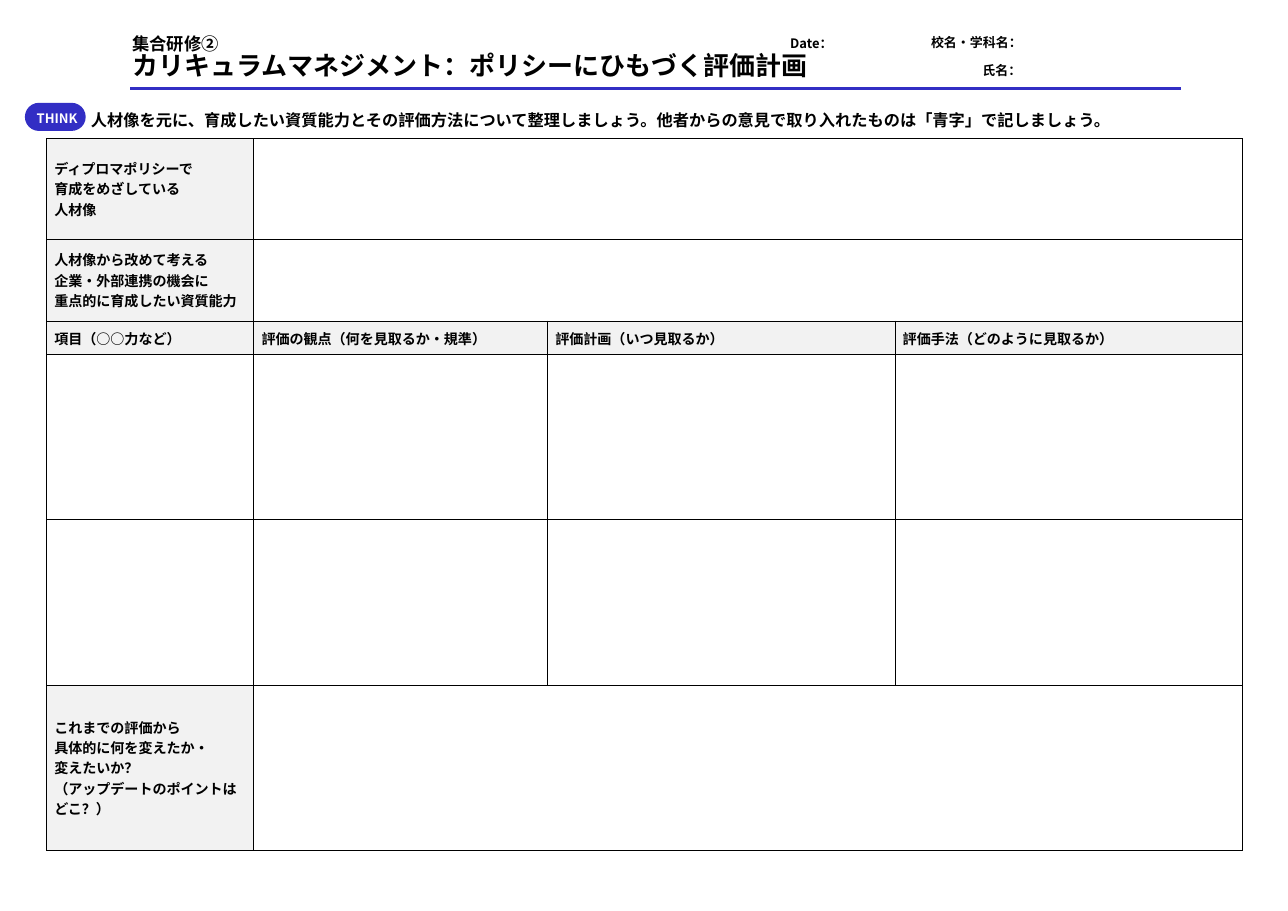
from pptx import Presentation
from pptx.dml.color import RGBColor as RGB
from pptx.enum.shapes import MSO_CONNECTOR as CONN, MSO_SHAPE as SHAPE
from pptx.enum.text import MSO_ANCHOR as ANCHOR, MSO_AUTO_SIZE as FIT, PP_ALIGN as ALIGN
from pptx.oxml import parse_xml
from pptx.oxml.ns import nsdecls
from pptx.util import Pt

COLORS = {"ink": "000000", "accent": "322EC4", "label": "F2F2F2", "white": "FFFFFF"}
FONT = "Noto Sans CJK JP"


class Sheet:
    def __init__(self, prs):
        self.s = prs.slides.add_slide(prs.slide_layouts[5])

    def color(self, name):
        return RGB.from_string(COLORS[name])

    def add_lines(self, tf, lines, sizes, color="ink", spacing=None):
        for i, (line, size) in enumerate(zip(lines, sizes)):
            p = tf.add_paragraph() if i else tf.paragraphs[0]
            p.alignment = ALIGN.LEFT
            if spacing:
                p.line_spacing = spacing
            r = p.add_run()
            r.text = line
            r.font.name = FONT
            r.font.size = Pt(size)
            r.font.bold = True
            r.font.color.rgb = self.color(color)
            ea = parse_xml(f'<a:ea {nsdecls("a")} typeface="{FONT}"/>')
            r.font._element.find("{*}latin").addnext(ea)

    def title(self, box, lines, sizes):
        sp = self.s.shapes.title
        sp.left, sp.top, sp.width, sp.height = map(Pt, box)
        tf = sp.text_frame
        tf.word_wrap = True
        tf.auto_size = FIT.NONE
        tf.vertical_anchor = ANCHOR.TOP
        self.add_lines(tf, lines, sizes, spacing=0.85)

    def text(self, box, line, size):
        tf = self.s.shapes.add_textbox(*map(Pt, box)).text_frame
        tf.word_wrap = True
        self.add_lines(tf, [line], [size])

    def pill(self, box, line, size):
        sp = self.s.shapes.add_shape(SHAPE.ROUNDED_RECTANGLE, *map(Pt, box))
        sp.adjustments[0] = 0.5
        sp.shadow.inherit = False
        sp.fill.solid()
        sp.fill.fore_color.rgb = self.color("accent")
        sp.line.fill.background()
        tf = sp.text_frame
        tf.word_wrap = False
        tf.vertical_anchor = ANCHOR.MIDDLE
        tf.margin_left, tf.margin_top, tf.margin_bottom = Pt(7.2), Pt(4), Pt(2)
        self.add_lines(tf, [line], [size], "white")

    def rule(self, x1, x2, y):
        c = self.s.shapes.add_connector(CONN.STRAIGHT, Pt(x1), Pt(y), Pt(x2), Pt(y))
        c.line.color.rgb = self.color("accent")
        c.line.width = Pt(3)
        c._element.spPr.append(parse_xml(f'<a:effectLst {nsdecls("a")}/>'))

    def border(self, cell):
        tcPr = cell._tc.get_or_add_tcPr()
        for side in "LRTB":
            tcPr.append(parse_xml(
                f'<a:ln{side} {nsdecls("a")} w="{Pt(0.75)}"><a:solidFill>'
                f'<a:srgbClr val="{COLORS["ink"]}"/></a:solidFill></a:ln{side}>'))

    def table(self, left, top, widths, heights, labels, wide_rows, size):
        shape = self.s.shapes.add_table(len(heights), len(widths), Pt(left), Pt(top),
                                        Pt(sum(widths)), Pt(sum(heights)))
        tb = shape.table
        tb.first_row = tb.horz_banding = False
        for col, width in zip(tb.columns, widths):
            col.width = Pt(width)
        for row, height in zip(tb.rows, heights):
            row.height = Pt(height)
        for i in range(len(heights)):
            for j in range(len(widths)):
                cell = tb.cell(i, j)
                self.border(cell)
                lines = labels.get((i, j), [])
                cell.fill.solid()
                cell.fill.fore_color.rgb = self.color("label" if lines else "white")
                cell.vertical_anchor = ANCHOR.MIDDLE
                cell.margin_left = cell.margin_right = Pt(7.2)
                cell.margin_top = cell.margin_bottom = Pt(7.2)
                self.add_lines(cell.text_frame, lines, [size] * len(lines))
        for i in wide_rows:
            tb.cell(i, 1).merge(tb.cell(i, len(widths) - 1))


def main():
    prs = Presentation()
    prs.slide_width, prs.slide_height = Pt(1190.16), Pt(841.68)
    sheet = Sheet(prs)

    sheet.title((115.2, 30.2, 669, 55.4),
                ["集合研修②", "カリキュラムマネジメント：ポリシーにひもづく評価計画"], [16, 24])
    sheet.text((723, 29.5, 120, 22), "Date：", 12)
    sheet.text((853.2, 28.8, 112, 22), "校名・学科名：", 12)
    sheet.text((900.7, 54.7, 107, 22), "氏名：", 12)
    sheet.rule(120.2, 1091.5, 82)

    labels = {
        (0, 0): ["ディプロマポリシーで", "育成をめざしている", "人材像"],
        (1, 0): ["人材像から改めて考える", "企業・外部連携の機会に", "重点的に育成したい資質能力"],
        (2, 0): ["項目（○○力など）"],
        (2, 1): ["評価の観点（何を見取るか・規準）"],
        (2, 2): ["評価計画（いつ見取るか）"],
        (2, 3): ["評価手法（どのように見取るか）"],
        (5, 0): ["これまでの評価から", "具体的に何を変えたか・", "変えたいか？",
                 "（アップデートのポイントはどこ？）"],
    }
    sheet.table(43, 128, [191.5, 271.5, 321, 321], [93, 75.5, 31] + [152.8] * 3,
                labels, [0, 1, 5], 13)

    sheet.text((77, 98, 1070.6, 25.2),
               "人材像を元に、育成したい資質能力とその評価方法について整理しましょう。"
               "他者からの意見で取り入れたものは「青字」で記しましょう。", 15)
    sheet.pill((23, 95, 56.2, 26), "THINK", 12)

    prs.save("out.pptx")


if __name__ == "__main__":
    main()
